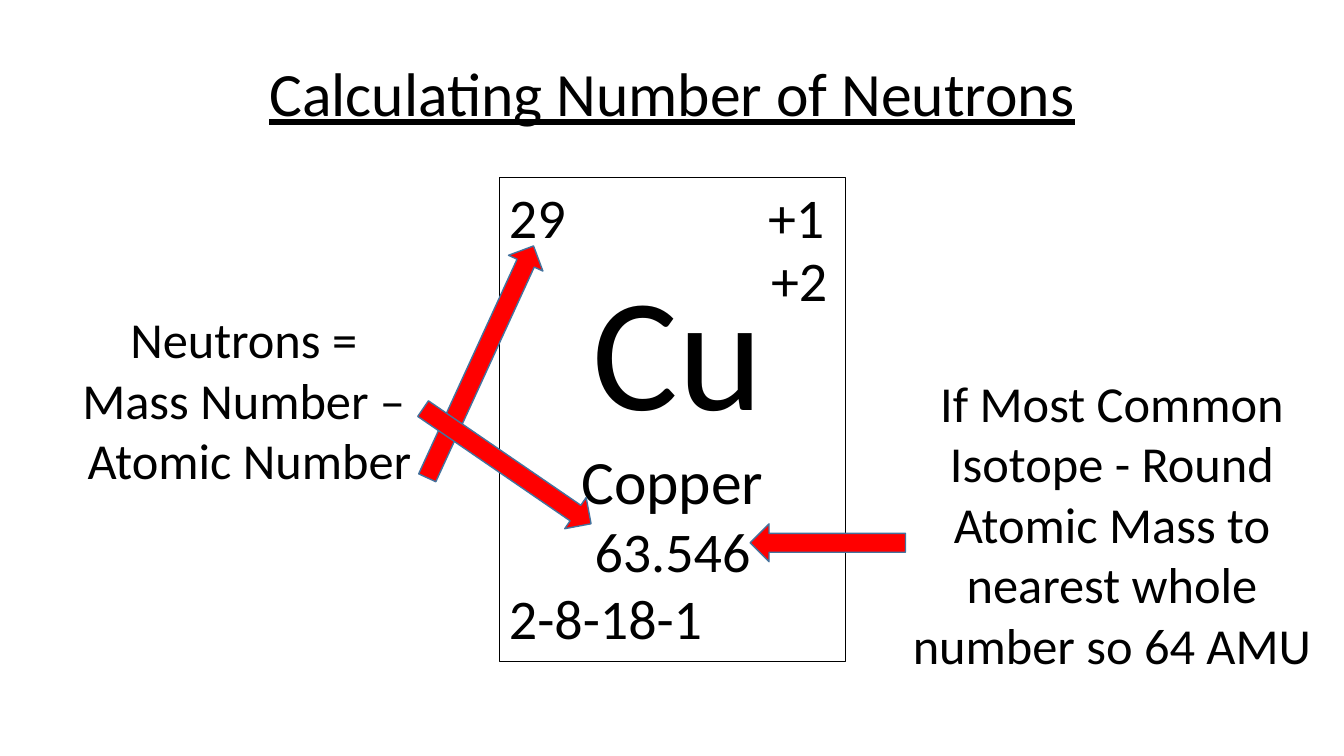
from dataclasses import dataclass
from math import atan2, degrees, hypot

from lxml.etree import SubElement
from pptx import Presentation
from pptx.dml.color import RGBColor
from pptx.enum.shapes import MSO_SHAPE
from pptx.enum.text import MSO_ANCHOR, PP_ALIGN
from pptx.oxml.ns import qn
from pptx.util import Inches, Pt


@dataclass(frozen=True)
class Theme:
    font: str = "Calibri"
    ink: RGBColor = RGBColor(0, 0, 0)
    paper: RGBColor = RGBColor(255, 255, 255)
    arrow: RGBColor = RGBColor(255, 0, 0)
    arrow_edge: RGBColor = RGBColor(0x43, 0x73, 0x9E)
    symbol: int = 115
    heading: int = 44
    figure: int = 40
    note: int = 36


THEME = Theme()
WIDTH, HEIGHT = Inches(13.33), Inches(7.5)
CENTER, LEFT = PP_ALIGN.CENTER, PP_ALIGN.LEFT

# Places are left, top, width, height in percent of the slide.
# Lines are text, size, alignment and paragraph format values.
CARD_PLACE = (37.13, 23.47, 25.81, 64)
CHARGE_TAB = Inches(2.57)
SYMBOL_INDENT = Inches(0.83)
CARD = [
    ("29\t+1", THEME.figure, LEFT),
    ("Cu", THEME.symbol, LEFT),
    ("Copper", THEME.heading, CENTER),
    ("63.546", THEME.figure, CENTER),
    ("2-8-18-1", THEME.figure, LEFT),
]
TITLE_PLACE = (6.9, 3.07, 86.27, 19.33)
TITLE = [("Calculating Number of Neutrons", THEME.heading, CENTER)]
ROUNDING_PLACE = (65.49, 48.53, 34.51, 41.73)
ROUNDING = [("If Most Common Isotope - Round Atomic Mass to nearest whole number so 64 AMU",
             THEME.note, CENTER)]
FORMULA_PLACE = (0, 40.13, 37.13, 25.6)
FORMULA = [(line, THEME.note, CENTER)
           for line in ("Neutrons = ", "Mass Number – ", "Atomic Number")]
SECOND_CHARGE_PLACE = (56.64, 31.87, 7.13, 10.27)
SECOND_CHARGE = [("+2", THEME.figure, LEFT)]

# Arrows run from tail to tip, in percent of the slide.
ROUNDING_TO_MASS = ((67.37, 71.8), (55.81, 71.8))
FORMULA_TO_ATOMIC_NUMBER = ((31.79, 63.2), (39.7, 32.53))
FORMULA_TO_MASS = ((31.48, 54.05), (43.98, 69.28))
ARROW_THICKNESS = 5


def across(share):
    return round(WIDTH * share / 100)


def down(share):
    return round(HEIGHT * share / 100)


def box(place):
    left, top, width, height = place
    return across(left), down(top), across(width), down(height)


def write(frame, lines, **font_format):
    frame.word_wrap = True
    for index, (text, size, alignment) in enumerate(lines):
        paragraph = frame.paragraphs[0] if index == 0 else frame.add_paragraph()
        paragraph.alignment = alignment
        run = paragraph.add_run()
        run.text = text
        run.font.color.rgb = THEME.ink
        values = {"name": THEME.font, "size": Pt(size), **font_format}
        for name, value in values.items():
            setattr(run.font, name, value)


def add_text(slide, place, lines, **font_format):
    frame = slide.shapes.add_textbox(*box(place)).text_frame
    write(frame, lines, **font_format)
    return frame


def paint(shape, fill, edge, edge_width):
    shape.shadow.inherit = False
    shape.fill.solid()
    shape.fill.fore_color.rgb = fill
    shape.line.color.rgb = edge
    shape.line.width = Pt(edge_width)


def add_card(slide):
    card = slide.shapes.add_shape(MSO_SHAPE.RECTANGLE, *box(CARD_PLACE))
    paint(card, THEME.paper, THEME.ink, 0.75)
    frame = card.text_frame
    frame.vertical_anchor = MSO_ANCHOR.TOP
    write(frame, CARD)
    number_line, symbol_line = frame.paragraphs[:2]
    tabs = SubElement(number_line._p.get_or_add_pPr(), qn("a:tabLst"))
    SubElement(tabs, qn("a:tab"), pos=str(CHARGE_TAB), algn="l")
    symbol_line._p.get_or_add_pPr().set("marL", str(SYMBOL_INDENT))


def add_arrow(slide, tail, tip):
    """Turn a level block arrow about its centre so it runs from tail to tip."""
    (x1, y1), (x2, y2) = ((across(x), down(y)) for x, y in (tail, tip))
    length, thickness = round(hypot(x2 - x1, y2 - y1)), down(ARROW_THICKNESS)
    arrow = slide.shapes.add_shape(
        MSO_SHAPE.RIGHT_ARROW,
        (x1 + x2 - length) // 2, (y1 + y2 - thickness) // 2, length, thickness)
    arrow.rotation = degrees(atan2(y2 - y1, x2 - x1)) % 360
    paint(arrow, THEME.arrow, THEME.arrow_edge, 1)


def main():
    deck = Presentation()
    deck.slide_width, deck.slide_height = WIDTH, HEIGHT
    slide = deck.slides.add_slide(deck.slide_layouts[6])
    add_card(slide)
    title = add_text(slide, TITLE_PLACE, TITLE, underline=True)
    title.vertical_anchor = MSO_ANCHOR.MIDDLE
    title.paragraphs[0].line_spacing = 0.9
    add_arrow(slide, *ROUNDING_TO_MASS)
    add_text(slide, ROUNDING_PLACE, ROUNDING)
    add_text(slide, FORMULA_PLACE, FORMULA)
    add_arrow(slide, *FORMULA_TO_ATOMIC_NUMBER)
    add_arrow(slide, *FORMULA_TO_MASS)
    add_text(slide, SECOND_CHARGE_PLACE, SECOND_CHARGE)
    deck.save("out.pptx")


if __name__ == "__main__":
    main()
